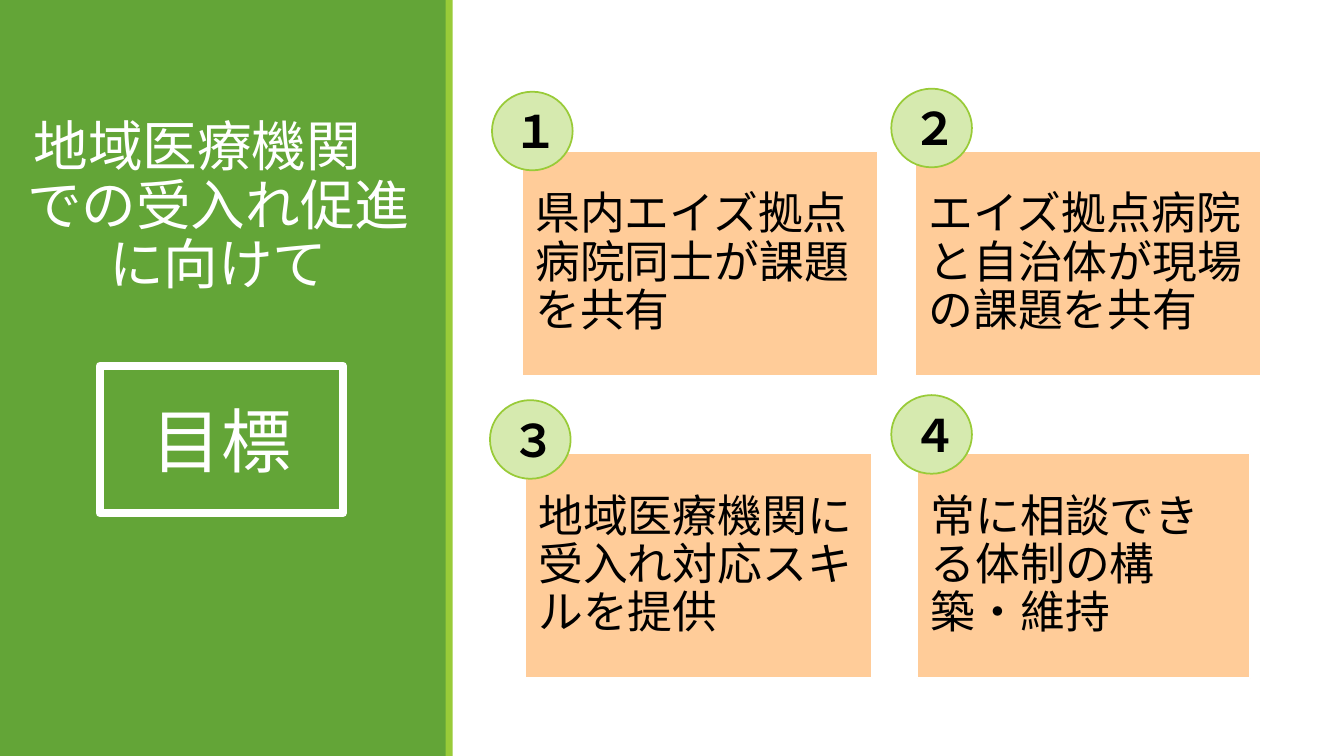
import pptx
import pptx.util
import pptx.dml.color
import pptx.enum.shapes
import pptx.enum.text
import pptx.oxml.ns
import lxml.etree

Inches = pptx.util.Inches
Pt = pptx.util.Pt
RGBColor = pptx.dml.color.RGBColor
MSO_SHAPE = pptx.enum.shapes.MSO_SHAPE
PP_ALIGN = pptx.enum.text.PP_ALIGN
MSO_ANCHOR = pptx.enum.text.MSO_ANCHOR

# Content
TITLE = [(" ", 41), ("地域医療機関　での受入れ促進に向けて", 39)]
HEADING = "目標"
# Each goal: number, text, card (left, top, width), badge (left, top)
GOALS = [
    ("１", "県内エイズ拠点病院同士が課題を共有", (5.18, 1.5, 3.53), (4.88, 0.91)),
    ("２", "エイズ拠点病院と自治体が現場の課題を共有", (9.08, 1.5, 3.43), (8.84, 0.88)),
    ("３", "地域医療機関に受入れ対応スキルを提供", (5.21, 4.5, 3.44), (4.86, 3.97)),
    ("４", "常に相談できる体制の構築・維持", (9.1, 4.5, 3.3), (8.84, 3.92)),
]
CARD_HEIGHT = 2.23
BADGE_SIZE = (0.8, 0.78)

# Style
FONT = "Noto Sans CJK JP"
GREEN = RGBColor(0x63, 0xA5, 0x37)
LIME = RGBColor(0x99, 0xCB, 0x38)
PALE_LIME = RGBColor(0xD6, 0xEA, 0xAF)
PEACH = RGBColor(0xFF, 0xCC, 0x99)
WHITE = RGBColor(0xFF, 0xFF, 0xFF)
BLACK = RGBColor(0, 0, 0)

presentation = pptx.Presentation()
presentation.slide_width = Inches(13.33)
presentation.slide_height = Inches(7.5)
slide = presentation.slides.add_slide(presentation.slide_layouts[6])


def add_box(kind, left, top, width, height, fill=None, line=None, line_width=1.25):
    shape = slide.shapes.add_shape(
        kind, Inches(left), Inches(top), Inches(width), Inches(height))
    shape.shadow.inherit = False
    if fill is None:
        shape.fill.background()
    else:
        shape.fill.solid()
        shape.fill.fore_color.rgb = fill
    if line is None:
        shape.line.fill.background()
    else:
        shape.line.color.rgb = line
        shape.line.width = Pt(line_width)
    return shape


def write(shape, runs, color=BLACK, bold=False, align=PP_ALIGN.CENTER,
          anchor=MSO_ANCHOR.MIDDLE, inset=None, spacing=None, before=0, after=0):
    """Fill a shape with one paragraph of (text, size) runs."""
    frame = shape.text_frame
    frame.word_wrap = True
    frame.vertical_anchor = anchor
    if inset is not None:
        frame.margin_left = frame.margin_right = Inches(inset)
        frame.margin_top = frame.margin_bottom = Inches(inset)
    paragraph = frame.paragraphs[0]
    paragraph.alignment = align
    paragraph.space_before = Pt(before)
    paragraph.space_after = Pt(after)
    if spacing is not None:
        paragraph.line_spacing = spacing
    for text, size in runs:
        run = paragraph.add_run()
        run.text = text
        run.font.size = Pt(size)
        run.font.bold = bold
        run.font.name = FONT
        run.font.color.rgb = color
        east_asian = lxml.etree.SubElement(
            run.font._element, pptx.oxml.ns.qn("a:ea"))
        east_asian.set("typeface", FONT)


# Side panel
add_box(MSO_SHAPE.RECTANGLE, 0, 0, 4.43, 7.5, fill=GREEN)
add_box(MSO_SHAPE.RECTANGLE, 4.42, 0, 0.07, 7.5, fill=LIME)
title = slide.shapes.add_textbox(Inches(0), Inches(1.11), Inches(4.33), Inches(2.14))
write(title, TITLE, color=WHITE, anchor=MSO_ANCHOR.TOP, spacing=0.9, before=12, after=2)
heading = add_box(MSO_SHAPE.RECTANGLE, 0.99, 3.63, 2.41, 1.46, line=WHITE, line_width=6)
write(heading, [(HEADING, 50)], color=WHITE)

# Goal cards with numbered badges
for number, text, card_place, badge_place in GOALS:
    card = add_box(MSO_SHAPE.RECTANGLE, *card_place, CARD_HEIGHT, fill=PEACH, line=WHITE)
    write(card, [(text, 32)], align=PP_ALIGN.LEFT, inset=0.13, spacing=0.9, after=11.2)
    badge = add_box(MSO_SHAPE.OVAL, *badge_place, *BADGE_SIZE, fill=PALE_LIME, line=LIME)
    write(badge, [(number, 32)], bold=True)

presentation.save("out.pptx")
